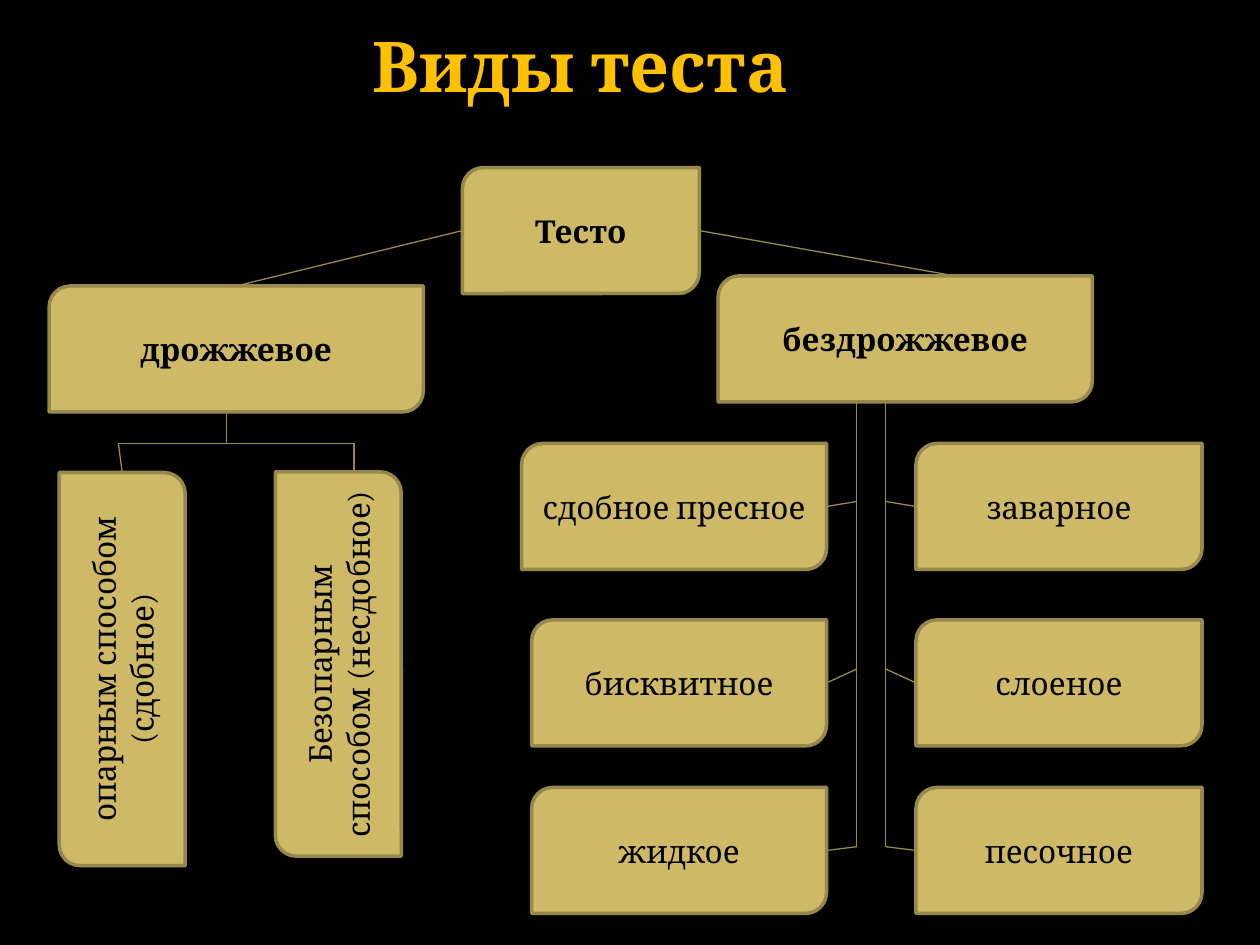
"""Build the slide that classifies kinds of dough as a tree."""
from lxml.etree import SubElement
from pptx import Presentation
from pptx.dml.color import RGBColor
from pptx.enum.shapes import MSO_CONNECTOR, MSO_SHAPE
from pptx.enum.text import MSO_ANCHOR, PP_ALIGN
from pptx.oxml.ns import qn
from pptx.util import Inches, Pt

BLACK = RGBColor(0x00, 0x00, 0x00)
GOLD = RGBColor(0xFF, 0xC0, 0x00)
SAND = RGBColor(0xCE, 0xB9, 0x66)
BORDER = RGBColor(0x98, 0x89, 0x4B)
BRANCH = RGBColor(0x99, 0x89, 0x46)

TITLE = "Виды теста"
TITLE_FORMAT = {"name": "Cambria", "size": Pt(40), "bold": True}
HEADING_FORMAT = {"name": "Cambria", "size": Pt(18), "bold": True}
LEAF_FORMAT = {"name": "Cambria", "size": Pt(18), "bold": False}
FRAME_FORMAT = {"word_wrap": True, "vertical_anchor": MSO_ANCHOR.MIDDLE}

BOX_HEIGHT = 1
LEFT_SIDE, RIGHT_SIDE, TOP_SIDE = 1, 3, 0

HEADINGS = [
    ("Тесто", 3.67, 1.33, 1.88),
    ("дрожжевое", 0.39, 2.27, 2.97),
    ("бездрожжевое", 5.7, 2.19, 2.97),
]
UPRIGHT_LEAVES = [
    ("опарным способом (сдобное)", -0.59, 4.81, 3.12),
    ("Безопарным способом (несдобное)", 1.16, 4.77, 3.05),
]
LEAF_ROWS = [
    (3.52, 3.98, "сдобное пресное", 2.42, "заварное"),
    (4.92, 5.31, "бисквитное", 2.34, "слоеное"),
    (6.25, 6.72, "жидкое", 2.34, "песочное"),
]
LEFT_COLUMN_END, RIGHT_COLUMN_START, RIGHT_COLUMN_WIDTH = 6.56, 7.27, 2.27
LEFT_SPINE, RIGHT_SPINE = 6.8, 7.03
SPINE_TOP, SPINE_BOTTOM = 3.2, 6.72
YEAST_LINES = [
    (1.8, 3.28, 1.8, 3.52),
    (2.81, 3.75, 2.81, 3.52),
    (0.94, 3.52, 0.97, 3.75),
    (0.94, 3.52, 2.81, 3.52),
]


def apply_format(target, values):
    for name, value in values.items():
        setattr(target, name, value)


def write_text(shape, text, text_format, color):
    apply_format(shape.text_frame, FRAME_FORMAT)
    paragraph = shape.text_frame.paragraphs[0]
    paragraph.alignment = PP_ALIGN.CENTER
    run = paragraph.add_run()
    run.text = text
    apply_format(run.font, text_format)
    run.font.color.rgb = color


def add_box(slide, text, left, top, width, text_format=LEAF_FORMAT, rotation=0):
    shape = slide.shapes.add_shape(
        MSO_SHAPE.ROUND_2_DIAG_RECTANGLE,
        Inches(left), Inches(top), Inches(width), Inches(BOX_HEIGHT),
    )
    shape.rotation = rotation
    shape.shadow.inherit = False
    shape.fill.solid()
    shape.fill.fore_color.rgb = SAND
    shape.line.color.rgb = BORDER
    shape.line.width = Pt(2)
    write_text(shape, text, text_format, BLACK)
    return shape


def add_line(slide, *ends):
    connector = slide.shapes.add_connector(
        MSO_CONNECTOR.STRAIGHT, *(Inches(value) for value in ends)
    )
    connector.line.color.rgb = BRANCH
    connector.line.width = Pt(0.75)
    SubElement(connector._element.spPr, qn("a:effectLst"))
    return connector


def build_slide(slide):
    slide.background.fill.solid()
    slide.background.fill.fore_color.rgb = BLACK
    title = slide.shapes.add_textbox(
        Inches(0.31), Inches(0), Inches(8.59), Inches(1.02)
    )
    write_text(title, TITLE, TITLE_FORMAT, GOLD)

    dough, yeast, unleavened = [
        add_box(slide, *heading, HEADING_FORMAT) for heading in HEADINGS
    ]
    for leaf in UPRIGHT_LEAVES:
        add_box(slide, *leaf, rotation=270)
    for ends in YEAST_LINES:
        add_line(slide, *ends)
    for spine in (LEFT_SPINE, RIGHT_SPINE):
        add_line(slide, spine, SPINE_TOP, spine, SPINE_BOTTOM)

    for top, joint, left_text, left_width, right_text in LEAF_ROWS:
        middle = top + BOX_HEIGHT / 2
        left_leaf = add_box(
            slide, left_text, LEFT_COLUMN_END - left_width, top, left_width
        )
        right_leaf = add_box(
            slide, right_text, RIGHT_COLUMN_START, top, RIGHT_COLUMN_WIDTH
        )
        for leaf, spine, edge, side in (
            (left_leaf, LEFT_SPINE, LEFT_COLUMN_END, RIGHT_SIDE),
            (right_leaf, RIGHT_SPINE, RIGHT_COLUMN_START, LEFT_SIDE),
        ):
            add_line(slide, spine, joint, edge, middle).end_connect(leaf, side)

    yeast_branch = add_line(slide, 3.67, 1.83, 1.88, 2.27)
    yeast_branch.begin_connect(dough, LEFT_SIDE)
    yeast_branch.end_connect(yeast, TOP_SIDE)
    unleavened_branch = add_line(slide, 5.55, 1.83, 7.58, 2.19)
    unleavened_branch.begin_connect(dough, RIGHT_SIDE)


def main():
    presentation = Presentation()
    presentation.slide_width = Inches(10)
    presentation.slide_height = Inches(7.5)
    build_slide(presentation.slides.add_slide(presentation.slide_layouts[6]))
    presentation.save("out.pptx")


if __name__ == "__main__":
    main()
